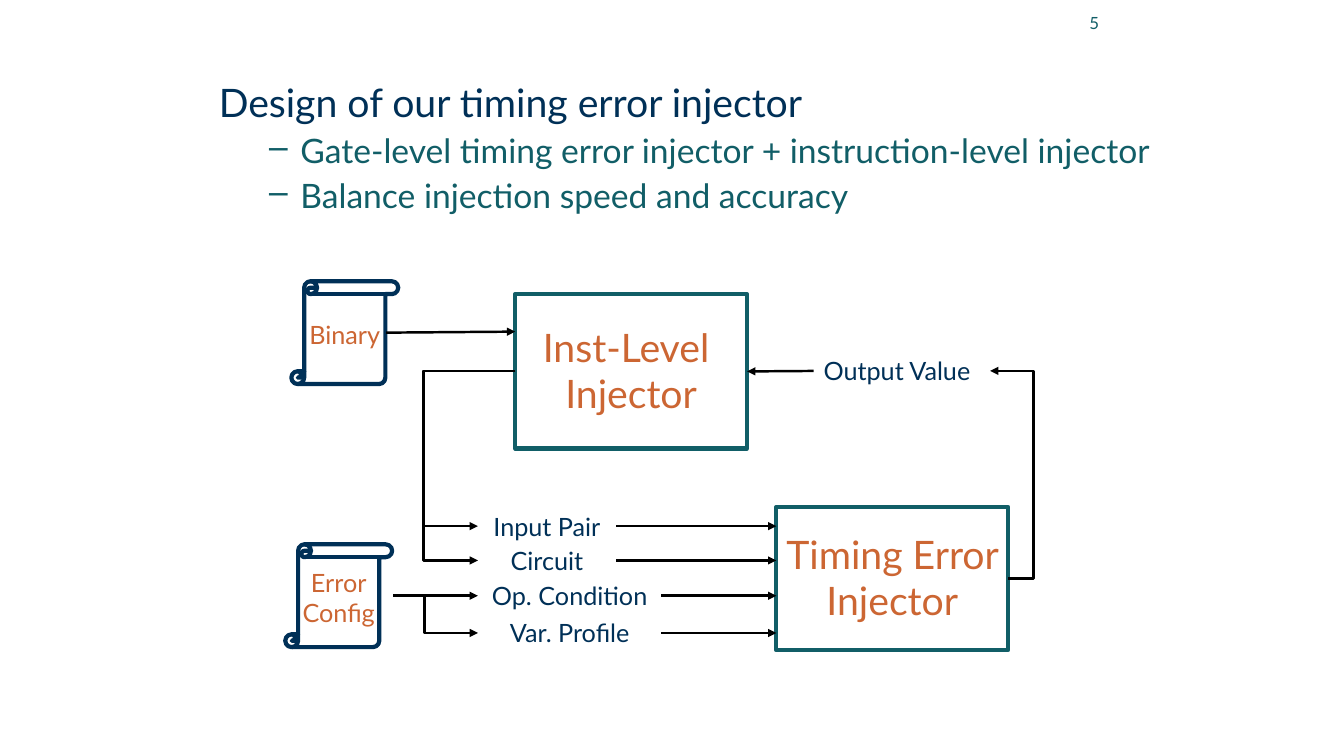
import pptx
import pptx.util
import pptx.dml.color
import pptx.enum.shapes
import pptx.enum.text
import pptx.oxml
import pptx.oxml.ns
import lxml.etree

Inches = pptx.util.Inches
Pt = pptx.util.Pt
RGBColor = pptx.dml.color.RGBColor
Shape = pptx.enum.shapes.MSO_SHAPE
Line = pptx.enum.shapes.MSO_CONNECTOR
Align = pptx.enum.text.PP_ALIGN
Anchor = pptx.enum.text.MSO_ANCHOR
qn = pptx.oxml.ns.qn

NAVY = RGBColor(0x00, 0x30, 0x57)
TEAL = RGBColor(0x11, 0x5E, 0x67)
ORANGE = RGBColor(0xCC, 0x66, 0x33)
BLACK = RGBColor(0x00, 0x00, 0x00)

deck = pptx.Presentation()
deck.slide_width = Inches(13.33)
deck.slide_height = Inches(7.5)
page = deck.slides.add_slide(deck.slide_layouts[6])


def write_text(box, text, size=18, color=NAVY, align=Align.CENTER, anchor=Anchor.TOP,
               spacing=None, inset=None):
    frame = box.text_frame
    frame.word_wrap = True
    frame.vertical_anchor = anchor
    if inset is not None:
        frame.margin_left = frame.margin_right = Inches(inset)
        frame.margin_top = frame.margin_bottom = Inches(inset)
    for index, words in enumerate(text.split("\n")):
        para = frame.paragraphs[0] if index == 0 else frame.add_paragraph()
        para.alignment = align
        para.line_spacing = spacing
        span = para.add_run()
        span.text = words
        span.font.name = "Lato"
        span.font.size = Pt(size)
        span.font.color.rgb = color
    return frame


def add_arrow(x1, y1, x2, y2, bend_x=None):
    kind = Line.STRAIGHT if bend_x is None else Line.ELBOW
    arrow = page.shapes.add_connector(kind, Inches(x1), Inches(y1), Inches(x2), Inches(y2))
    arrow.line.color.rgb = BLACK
    arrow.line.width = Pt(1.75)
    outline = arrow.line._get_or_add_ln()
    lxml.etree.SubElement(outline, qn("a:tailEnd"), type="triangle")
    properties = arrow._element.spPr
    lxml.etree.SubElement(properties, qn("a:effectLst"))
    if bend_x is not None:
        bend = round((bend_x - x1) / (x2 - x1) * 100000)
        guides = properties.find(qn("a:prstGeom")).get_or_add_avLst()
        lxml.etree.SubElement(guides, qn("a:gd"), name="adj1", fmla=f"val {bend}")
    return arrow


heading = page.shapes.add_textbox(Inches(2.17), Inches(0.83), Inches(9.33), Inches(6.58))
frame = write_text(heading, "Design of our timing error injector", size=28,
                   align=Align.LEFT, spacing=0.9, inset=0)
for point in ("Gate-level timing error injector + instruction-level injector",
              "Balance injection speed and accuracy"):
    para = frame.add_paragraph()
    para.level = 1
    para.line_spacing = 0.9
    para.space_before = Pt(6)
    properties = para._p.get_or_add_pPr()
    properties.set("marL", str(Inches(0.81)))
    properties.set("indent", str(Inches(-0.31)))
    bullet_color = lxml.etree.SubElement(properties, qn("a:buClr"))
    lxml.etree.SubElement(bullet_color, qn("a:srgbClr"), val=str(TEAL))
    lxml.etree.SubElement(properties, qn("a:buChar"), char="–")
    span = para.add_run()
    span.text = point
    span.font.name = "Lato"
    span.font.size = Pt(24)
    span.font.color.rgb = TEAL

number = page.shapes.add_textbox(Inches(9.78), Inches(-0.02), Inches(1.22), Inches(0.5))
write_text(number, "5", size=12, color=TEAL, align=Align.RIGHT, anchor=Anchor.MIDDLE)

blocks = {}
for name, text, kind, left, top, width, height, size, color in (
    ("timing", "Timing Error Injector", Shape.RECTANGLE, 7.7, 5.03, 2.3, 1.42, 28, TEAL),
    ("instruction", "Inst-Level \nInjector", Shape.RECTANGLE, 5.11, 2.92, 2.3, 1.53, 28, TEAL),
    ("config", "Error\nConfig", Shape.VERTICAL_SCROLL, 2.83, 5.4, 1.06, 1.02, 18, NAVY),
    ("binary", "Binary", Shape.VERTICAL_SCROLL, 2.89, 2.79, 1.06, 1.02, 18, NAVY),
):
    block = page.shapes.add_shape(kind, Inches(left), Inches(top), Inches(width), Inches(height))
    block.shadow.inherit = False
    block.fill.background()
    block.line.color.rgb = color
    block.line.width = Pt(3)
    write_text(block, text, size=size, color=ORANGE, anchor=Anchor.MIDDLE, spacing=0.99, inset=0)
    blocks[name] = block

labels = {}
for text, middle, width in (("Input Pair", 5.22, 1.37), ("Circuit", 5.56, 1.37),
                            ("Op. Condition", 5.91, 1.82), ("Var. Profile", 6.28, 1.82)):
    label = page.shapes.add_textbox(Inches(4.74), Inches(middle - 0.2), Inches(width), Inches(0.4))
    write_text(label, text)
    add_arrow(4.74 + width, middle, 7.7, middle).begin_connect(label, 3)
    labels[text] = label

output = page.shapes.add_textbox(Inches(8.07), Inches(3.48), Inches(1.75), Inches(0.4))
write_text(output, "Output Value", align=Align.LEFT)
feedback = add_arrow(8.07, 3.68, 7.41, 3.68)
feedback.begin_connect(output, 1)
feedback.end_connect(blocks["instruction"], 3)

add_arrow(3.83, 3.3, 5.11, 3.29)
add_arrow(3.9, 5.91, 4.74, 5.91).end_connect(labels["Op. Condition"], 1)
add_arrow(5.11, 3.68, 4.74, 5.22, bend_x=4.2)
add_arrow(5.11, 3.68, 4.74, 5.56, bend_x=4.2)
add_arrow(4.17, 5.91, 4.74, 6.28, bend_x=4.21)
add_arrow(10, 5.74, 9.82, 3.68, bend_x=10.25)

deck.save("out.pptx")
